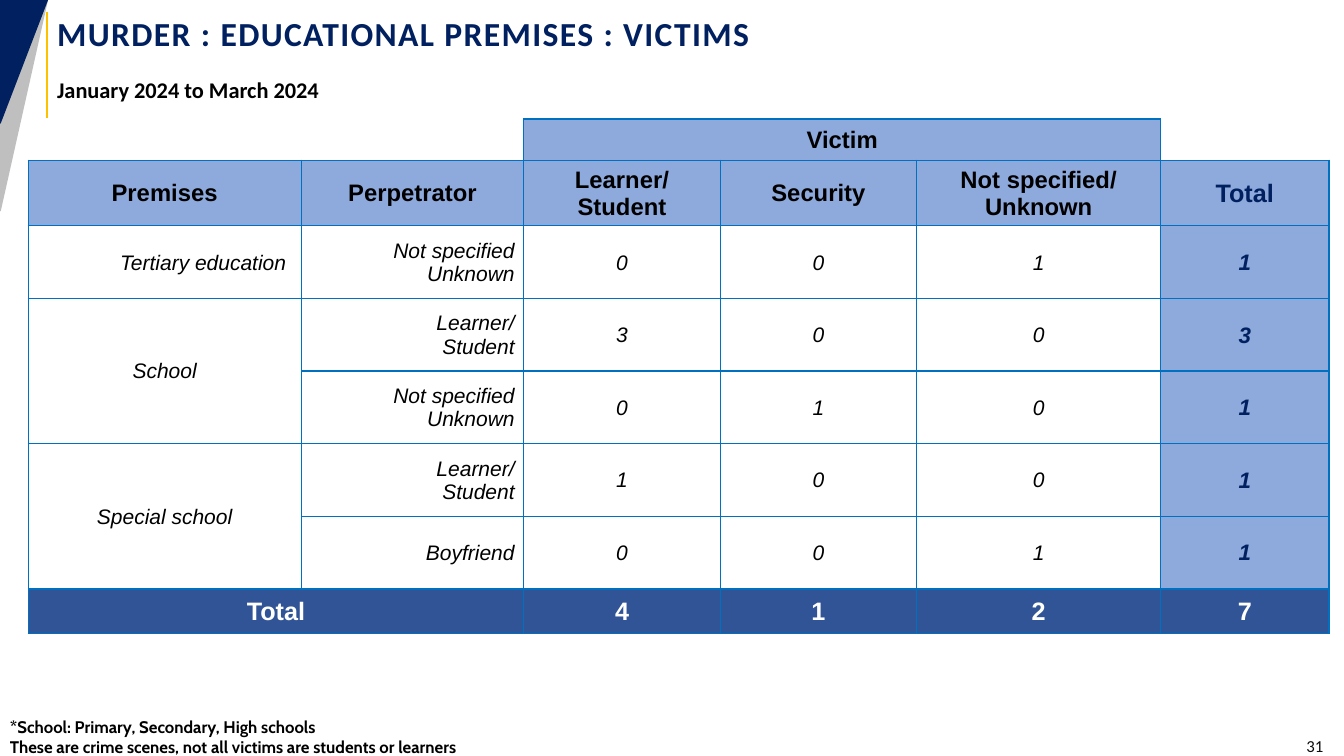
from dataclasses import dataclass, replace

from lxml.etree import SubElement
from pptx import Presentation
from pptx.dml.color import RGBColor
from pptx.enum.shapes import MSO_CONNECTOR, MSO_SHAPE
from pptx.enum.text import MSO_ANCHOR, PP_ALIGN
from pptx.oxml.ns import qn
from pptx.slide import Slide
from pptx.table import Table, _Cell
from pptx.text.text import TextFrame
from pptx.util import Cm, Pt


@dataclass(frozen=True)
class Theme:
    navy: str = "002060"
    gray: str = "BFBFBF"
    gold: str = "FFC000"
    black: str = "000000"
    number: str = "0D0D0D"
    white: str = "FFFFFF"
    header: str = "8EA9DB"
    total: str = "305496"
    grid: str = "0070C0"
    heading_font: str = "Calibri"
    note_font: str = "Cabin"
    table_font: str = "Arial"
    title_pt: float = 24
    subtitle_pt: float = 16
    note_pt: float = 12
    header_pt: float = 17
    total_pt: float = 18
    body_pt: float = 15
    row_total_pt: float = 16
    line_pt: float = 1.25
    grid_pt: float = 1


@dataclass(frozen=True)
class CellStyle:
    size: float
    color: str
    fill: str | None = None
    bold: bool = False
    italic: bool = False
    align: PP_ALIGN = PP_ALIGN.CENTER
    right_cm: float = 0.03


@dataclass(frozen=True)
class Record:
    premises: str
    perpetrator: str
    counts: tuple[int, int, int]
    premises_rows: int = 1


T = Theme()
HEADER = CellStyle(T.header_pt, T.black, T.header, bold=True)
HEADER_TOTAL = replace(HEADER, size=T.total_pt, color=T.navy)
BODY = CellStyle(T.body_pt, T.black, italic=True)
BODY_RIGHT = replace(BODY, align=PP_ALIGN.RIGHT, right_cm=0.23)
ROW_TOTAL = CellStyle(T.row_total_pt, T.navy, T.header, bold=True, italic=True)
GRAND_TOTAL = CellStyle(T.total_pt, T.white, T.total, bold=True)

COLUMNS = (6.88, 5.61, 4.95, 4.95, 6.15, 4.24)
ROWS = (1.04, 1.65, *[1.83] * 5, 1.12)
HEADINGS = ("Premises", "Perpetrator", "Learner/\nStudent", "Security",
            "Not specified/\nUnknown", "Total")
RECORDS = (
    Record("Tertiary education ", "Not specified\nUnknown", (0, 0, 1)),
    Record("School", "Learner/\nStudent", (3, 0, 0), premises_rows=2),
    Record("", "Not specified\nUnknown", (0, 1, 0)),
    Record("Special school", "Learner/\nStudent", (1, 0, 0), premises_rows=2),
    Record("", "Boyfriend", (0, 0, 1)),
)
# Edges drawn around the empty cells beside the "Victim" heading
EMPTY_EDGES = {(0, 0): "B", (0, 1): "RB", (0, 5): "LB"}


def rgb(color: str) -> RGBColor:
    return RGBColor.from_string(color)


def write(tf: TextFrame, text: str, *, size: float, color: str, font: str,
          bold: bool = False, italic: bool = False, align: PP_ALIGN = PP_ALIGN.LEFT,
          line_spacing: float | None = None, before: float = 0, after: float = 0,
          tracking: float = 0) -> None:
    """Fill the frame's first paragraph; a newline becomes a line break."""
    p = tf.paragraphs[0]
    p.alignment = align
    p.space_before, p.space_after = Pt(before), Pt(after)
    if line_spacing:
        p.line_spacing = line_spacing
    for i, line in enumerate(text.split("\n")):
        if i:
            p.add_line_break()
        r = p.add_run()
        r.text = line
        r.font.name, r.font.size = font, Pt(size)
        r.font.bold, r.font.italic = bold, italic
        r.font.color.rgb = rgb(color)
        if tracking:
            r.font._element.set("spc", str(round(tracking * 100)))


def add_text(slide: Slide, left: float, top: float, width: float, height: float,
             text: str, anchor: MSO_ANCHOR = MSO_ANCHOR.TOP, **fmt) -> None:
    tf = slide.shapes.add_textbox(Cm(left), Cm(top), Cm(width), Cm(height)).text_frame
    tf.word_wrap = True
    tf.vertical_anchor = anchor
    write(tf, text, **fmt)


def add_corner(slide: Slide, height: float, color: str) -> None:
    sp = slide.shapes.add_shape(MSO_SHAPE.RIGHT_TRIANGLE, 0, 0, Cm(1.19), Cm(height))
    sp._element.spPr.xfrm.set("flipV", "1")
    sp.shadow.inherit = False
    sp.fill.solid()
    sp.fill.fore_color.rgb = rgb(color)
    sp.line.color.rgb = rgb(color)
    sp.line.width = Pt(T.line_pt)


def add_title_rule(slide: Slide) -> None:
    rule = slide.shapes.add_connector(MSO_CONNECTOR.STRAIGHT, Cm(1.19), Cm(2.97),
                                      Cm(1.19), Cm(0.3))
    rule.line.color.rgb = rgb(T.gold)
    rule.line.width = Pt(T.line_pt)
    SubElement(rule._element.spPr, qn("a:effectLst"))


def set_borders(cell: _Cell, edges: str) -> None:
    """Draw the named edges (L, R, T, B) and clear the others."""
    props = cell._tc.get_or_add_tcPr()
    for edge in "LRTB":
        ln = SubElement(props, qn(f"a:ln{edge}"), w=str(Pt(T.grid_pt)))
        if edge in edges:
            fill = SubElement(ln, qn("a:solidFill"))
            SubElement(fill, qn("a:srgbClr"), val=T.grid)
        else:
            SubElement(ln, qn("a:noFill"))


def put(table: Table, row: int, col: int, text: str, style: CellStyle,
        rows: int = 1, cols: int = 1) -> None:
    cell = table.cell(row, col)
    if rows * cols > 1:
        cell.merge(table.cell(row + rows - 1, col + cols - 1))
    cell.vertical_anchor = MSO_ANCHOR.MIDDLE
    cell.margin_left = cell.margin_top = Cm(0.03)
    cell.margin_right, cell.margin_bottom = Cm(style.right_cm), 0
    if style.fill:
        cell.fill.solid()
        cell.fill.fore_color.rgb = rgb(style.fill)
    write(cell.text_frame, text, size=style.size, color=style.color, font=T.table_font,
          bold=style.bold, italic=style.italic, align=style.align)


def add_victims_table(slide: Slide) -> None:
    table = slide.shapes.add_table(len(ROWS), len(COLUMNS), Cm(0.71), Cm(3),
                                   Cm(sum(COLUMNS)), Cm(sum(ROWS))).table
    table.first_row = table.horz_banding = False
    for column, width in zip(table.columns, COLUMNS):
        column.width = Cm(width)
    for r, height in enumerate(ROWS):
        table.rows[r].height = Cm(height)
        for c in range(len(COLUMNS)):
            set_borders(table.cell(r, c), EMPTY_EDGES.get((r, c), "LRTB"))
            table.cell(r, c).fill.background()

    put(table, 0, 2, "Victim", HEADER, cols=3)
    for c, heading in enumerate(HEADINGS):
        put(table, 1, c, heading, HEADER_TOTAL if heading == "Total" else HEADER)
    for r, rec in enumerate(RECORDS, start=2):
        if rec.premises:
            style = BODY if rec.premises_rows > 1 else BODY_RIGHT
            put(table, r, 0, rec.premises, style, rows=rec.premises_rows)
        put(table, r, 1, rec.perpetrator, BODY_RIGHT)
        for c, count in enumerate(rec.counts, start=2):
            put(table, r, c, str(count), BODY)
        put(table, r, 5, str(sum(rec.counts)), ROW_TOTAL)

    last = len(ROWS) - 1
    sums = [sum(counts) for counts in zip(*(rec.counts for rec in RECORDS))]
    put(table, last, 0, "Total", GRAND_TOTAL, cols=2)
    for c, value in enumerate([*sums, sum(sums)], start=2):
        put(table, last, c, str(value), GRAND_TOTAL)


def main() -> None:
    prs = Presentation()
    prs.slide_width, prs.slide_height = Cm(33.87), Cm(19.05)
    slide = prs.slides.add_slide(prs.slide_layouts[6])
    add_corner(slide, 5.31, T.gray)
    add_corner(slide, 3.1, T.navy)
    add_title_rule(slide)
    add_text(slide, 30.1, 18.47, 3.5, 0.66, "31", MSO_ANCHOR.MIDDLE, size=T.note_pt,
             color=T.number, font=T.heading_font, align=PP_ALIGN.RIGHT)
    add_text(slide, 1.19, 0.3, 30.38, 1.24, "MURDER : EDUCATIONAL PREMISES : VICTIMS",
             MSO_ANCHOR.MIDDLE, size=T.title_pt, color=T.navy, font=T.heading_font,
             bold=True, line_spacing=0.8, tracking=1)
    add_text(slide, 1.19, 1.73, 30.38, 1.22, "January 2024 to March 2024",
             size=T.subtitle_pt, color=T.black, font=T.heading_font, bold=True,
             line_spacing=1.08, before=6, after=2)
    add_text(slide, 0, 17.93, 33.87, 1.27,
             "*School: Primary, Secondary, High schools\n"
             "These are crime scenes, not all victims are students or learners",
             size=T.note_pt, color=T.black, font=T.note_font, bold=True)
    add_victims_table(slide)
    prs.save("out.pptx")


if __name__ == "__main__":
    main()
